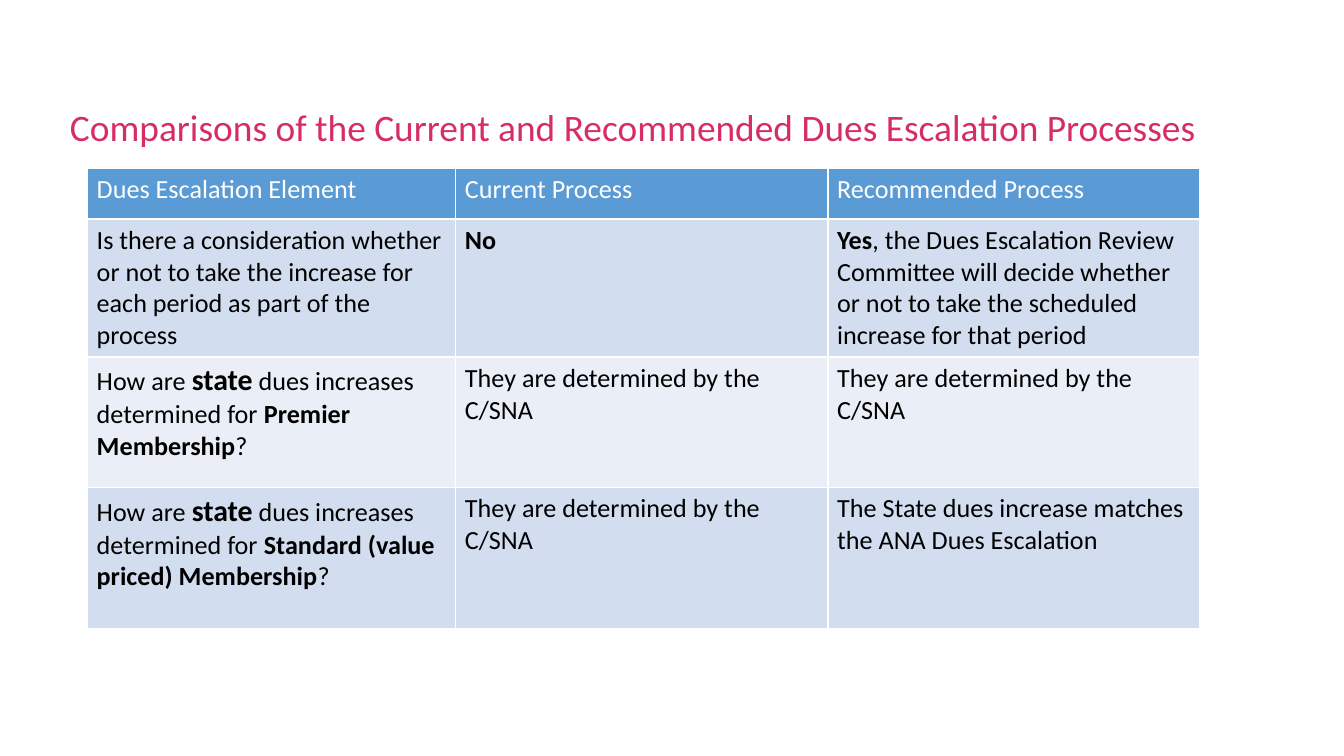
"""Build a slide with a table comparing two dues escalation processes."""
from pptx import Presentation
from pptx.dml.color import RGBColor
from pptx.enum.text import MSO_ANCHOR, PP_ALIGN
from pptx.util import Inches, Pt

LEFT, MIDDLE = PP_ALIGN.LEFT, MSO_ANCHOR.MIDDLE
FONT = "Calibri"
BODY, LARGE = 14, 16
COLORS = {"title": "D62D67", "header": "5B9BD5", "odd": "D2DEEF",
          "even": "EAEFF7", "white": "FFFFFF", "black": "000000"}

TITLE = "Comparisons of the Current and Recommended Dues Escalation Processes"
BY_CSNA = "They are determined by the C/SNA"


def state_question(membership):
    return [("How are ", BODY, False), ("state", LARGE, True),
            (" dues increases determined for ", BODY, False),
            (membership, BODY, True), ("?", BODY, False)]


def plain(text):
    return [(text, BODY, False)]


ROWS = [
    [plain("Dues Escalation Element"), plain("Current Process"),
     plain("Recommended Process")],
    [plain("Is there a consideration whether or not to take the increase "
           "for each period as part of the process"),
     [("No", BODY, True)],
     [("Yes", BODY, True),
      (", the Dues Escalation Review Committee will decide whether or not "
       "to take the scheduled increase for that period", BODY, False)]],
    [state_question("Premier Membership"), plain(BY_CSNA), plain(BY_CSNA)],
    [state_question("Standard (value priced) Membership"), plain(BY_CSNA),
     plain("The State dues increase matches the ANA Dues Escalation")],
]
COL_WIDTHS = [2.74, 2.77, 2.77]
ROW_HEIGHTS = [0.38, 1.02, 0.97, 1.05]


def rgb(name):
    return RGBColor.from_string(COLORS[name])


def add_title(slide):
    sp = slide.shapes.title
    sp.left, sp.top, sp.width, sp.height = map(Inches, (0.42, 0.42, 8.85, 1.09))
    tf = sp.text_frame
    tf.text = TITLE
    tf.vertical_anchor = MIDDLE
    p = tf.paragraphs[0]
    p.alignment, p.line_spacing = LEFT, 0.9
    p.font.name, p.font.size = FONT, Pt(20)
    p.font.color.rgb = rgb("title")


def fill_cell(cell, runs, row):
    cell.fill.solid()
    band = "header" if row == 0 else "odd" if row % 2 else "even"
    cell.fill.fore_color.rgb = rgb(band)
    cell.margin_left = cell.margin_right = Inches(0.07)
    cell.margin_top = cell.margin_bottom = Inches(0.04)
    p = cell.text_frame.paragraphs[0]
    for text, size, bold in runs:
        r = p.add_run()
        r.text = text
        r.font.name, r.font.size, r.font.bold = FONT, Pt(size), bold
        r.font.color.rgb = rgb("black" if row else "white")


def add_comparison(slide):
    table = slide.shapes.add_table(
        len(ROWS), len(COL_WIDTHS), Inches(0.65), Inches(1.25),
        Inches(sum(COL_WIDTHS)), Inches(sum(ROW_HEIGHTS))).table
    for col, width in zip(table.columns, COL_WIDTHS):
        col.width = Inches(width)
    for i, (height, cells) in enumerate(zip(ROW_HEIGHTS, ROWS)):
        table.rows[i].height = Inches(height)
        for j, runs in enumerate(cells):
            fill_cell(table.cell(i, j), runs, i)


def main():
    prs = Presentation()
    prs.slide_width = Inches(10)
    prs.slide_height = prs.slide_width * 9 // 16
    slide = prs.slides.add_slide(prs.slide_layouts[5])
    add_title(slide)
    add_comparison(slide)
    prs.save("out.pptx")


if __name__ == "__main__":
    main()
